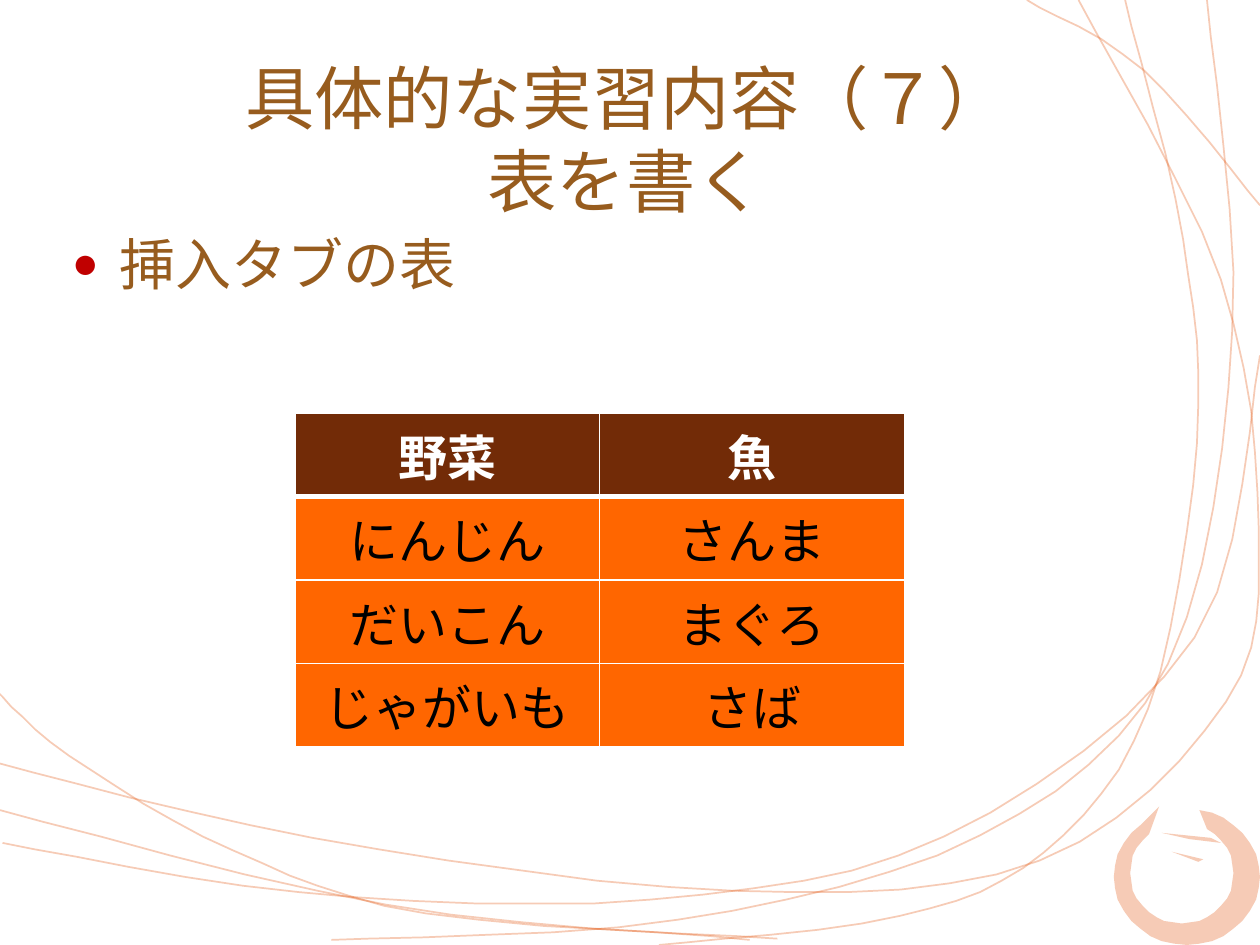
"""Build the slide on drawing a table, with its swirl decoration."""
from math import cos, radians, sin

from lxml.etree import SubElement
from pptx import Presentation
from pptx.dml.color import RGBColor
from pptx.enum.text import MSO_ANCHOR, MSO_AUTO_SIZE, PP_ALIGN
from pptx.oxml.ns import qn
from pptx.util import Inches, Pt

WHITE = RGBColor(255, 255, 255)
BLACK = RGBColor(0, 0, 0)
BROWN = RGBColor(0x97, 0x5C, 0x1E)
DARK = RGBColor(0x72, 0x2B, 0x07)
ORANGE = RGBColor(0xFF, 0x66, 0x00)
RED = RGBColor(0xC0, 0, 0)
RUST = RGBColor(0xE3, 0x56, 0x0E)

WIDE, HIGH = Inches(10), Inches(7.5)
COL, ROW = WIDE / 10, HIGH / 7.5
STEP = COL / 100

FOODS = [("野菜", "魚"), ("にんじん", "さんま"), ("だいこん", "まぐろ"), ("じゃがいも", "さば")]

SWIRLS = [
    [(-3, 548), (55, 600), (185, 675), (338, 725), (617, 745)],
    [(523, 750), (714, 727), (828, 677), (911, 563), (950, 352), (939, 190), (893, 0)],
    [(0, 606), (248, 665), (582, 707), (825, 683), (973, 557), (999, 420), (969, 222),
     (856, 0)],
    [(2, 669), (237, 708), (516, 714), (749, 664), (948, 506), (1000, 282)],
    [(263, 746), (538, 730), (778, 663), (927, 527), (978, 263), (958, 0)],
    [(815, 0), (908, 56), (1000, 163)],
    [(0, 643), (306, 718), (595, 746)],
]
DABS = [
    [(922, 661), (961, 665), (969, 669), (944, 666)],
    [(930, 676), (955, 682), (951, 684)],
]


def place(item, left, top, width, height):
    """Set an item on the grid of columns and rows."""
    item.left, item.top = int(left * COL), int(top * ROW)
    item.width, item.height = int(width * COL), int(height * ROW)


def write(frame, text, size=28, font="Arial", color=BLACK, bold=False, align=None):
    """Put formatted text in a frame and return its paragraph."""
    frame.text = text
    para = frame.paragraphs[0]
    para.alignment = align
    for run in para.runs:
        run.font.size, run.font.name = Pt(size), font
        run.font.bold, run.font.color.rgb = bold, color
    return para


def fade(fill, share):
    """Colour a fill rust and make it partly clear."""
    fill.solid()
    fill.fore_color.rgb = RUST
    tint = fill._xPr.find(qn("a:solidFill"))[0]
    SubElement(tint, qn("a:alpha"), val=str(share * 1000))


def blend(a, b, c, d, t):
    """Return the spline value between b and c at share t."""
    return b + t / 2 * (c - a + t * (2 * a - 5 * b + 4 * c - d
                                     + t * (3 * (b - c) + d - a)))


def smooth(knots, parts=6):
    """Return points on a spline through the knots."""
    ends = [knots[0], *knots, knots[-1]]
    spans = zip(ends, ends[1:], ends[2:], ends[3:])
    dots = [tuple(blend(*axis, n / parts) for axis in zip(*span))
            for span in spans for n in range(parts)]
    return dots + [knots[-1]]


def arc(x, y, wide, high, start, stop, step):
    """Return points on part of an ellipse."""
    turns = [radians(a) for a in range(start, stop, step)]
    return [(x + wide * cos(a), y + high * sin(a)) for a in turns]


def trace(slide, dots, closed=False):
    """Draw a swirl line, or a filled brush stroke when closed."""
    pen = slide.shapes.build_freeform(*dots[0], scale=STEP)
    pen.add_line_segments(dots[1:], close=closed)
    shape = pen.convert_to_shape()
    shape.shadow.inherit = False
    if closed:
        fade(shape.fill, 30)
        shape.line.fill.background()
    else:
        shape.fill.background()
        shape.line.width = Pt(1)
        fade(shape.line.fill, 29)


def adorn(slide):
    """Draw the swirls and the brushed ring."""
    for knots in SWIRLS:
        trace(slide, smooth(knots))
    outer = arc(942, 696, 58, 54, -80, 240, 10)
    inner = arc(938, 693, 41, 40, 230, -70, -10)
    for dots in [outer + [(920, 640)] + inner, *DABS]:
        trace(slide, dots, closed=True)


def head(slide, text):
    """Fill the title placeholder."""
    title = slide.shapes.title
    place(title, 0.47, 0.47, 9, 1.25)
    write(title.text_frame, text, size=39.6, font="Calibri", color=BROWN,
          align=PP_ALIGN.CENTER)
    title.text_frame.auto_size = MSO_AUTO_SIZE.NONE
    title.text_frame.vertical_anchor = MSO_ANCHOR.MIDDLE


def list_up(slide, text):
    """Fill the body placeholder with a bulleted line."""
    body = slide.placeholders[1]
    place(body, 0.47, 1.77, 9, 5.13)
    para = write(body.text_frame, text, size=32, font="Calibri", color=BROWN)
    body.text_frame.auto_size = MSO_AUTO_SIZE.NONE
    props = para._p.get_or_add_pPr()
    SubElement(SubElement(props, qn("a:buClr")), qn("a:srgbClr"), val=str(RED))
    SubElement(props, qn("a:buSzPct"), val="80000")
    SubElement(props, qn("a:buFont"), typeface="Arial")
    SubElement(props, qn("a:buChar"), char="●")


def edge(cell, side, width):
    """Give one side of a cell a white border."""
    line = SubElement(cell._tc.get_or_add_tcPr(), qn("a:" + side), w=str(Pt(width)))
    SubElement(SubElement(line, qn("a:solidFill")), qn("a:srgbClr"), val=str(WHITE))


def grid(slide, rows):
    """Add the table with a dark header row."""
    frame = slide.shapes.add_table(len(rows), len(rows[0]), int(2.34 * COL),
                                   int(3.28 * ROW), int(4.84 * COL), int(2.64 * ROW))
    for r, row in enumerate(rows):
        top = r == 0
        for c, text in enumerate(row):
            cell = frame.table.cell(r, c)
            write(cell.text_frame, text, color=WHITE if top else BLACK, bold=top,
                  align=PP_ALIGN.CENTER)
            for side in ("lnL", "lnR", "lnT", "lnB"):
                edge(cell, side, 3 if (r, side) in [(0, "lnB"), (1, "lnT")] else 1)
            cell.fill.solid()
            cell.fill.fore_color.rgb = DARK if top else ORANGE


def main():
    """Build and save the slide."""
    deck = Presentation()
    deck.slide_width, deck.slide_height = WIDE, HIGH
    slide = deck.slides.add_slide(deck.slide_layouts[1])
    holders = list(slide.placeholders)
    adorn(slide)
    for holder in holders:
        slide.shapes._spTree.append(holder._element)
    head(slide, "具体的な実習内容（７）\v表を書く")
    list_up(slide, "挿入タブの表")
    grid(slide, FOODS)
    deck.save("out.pptx")


if __name__ == "__main__":
    main()
